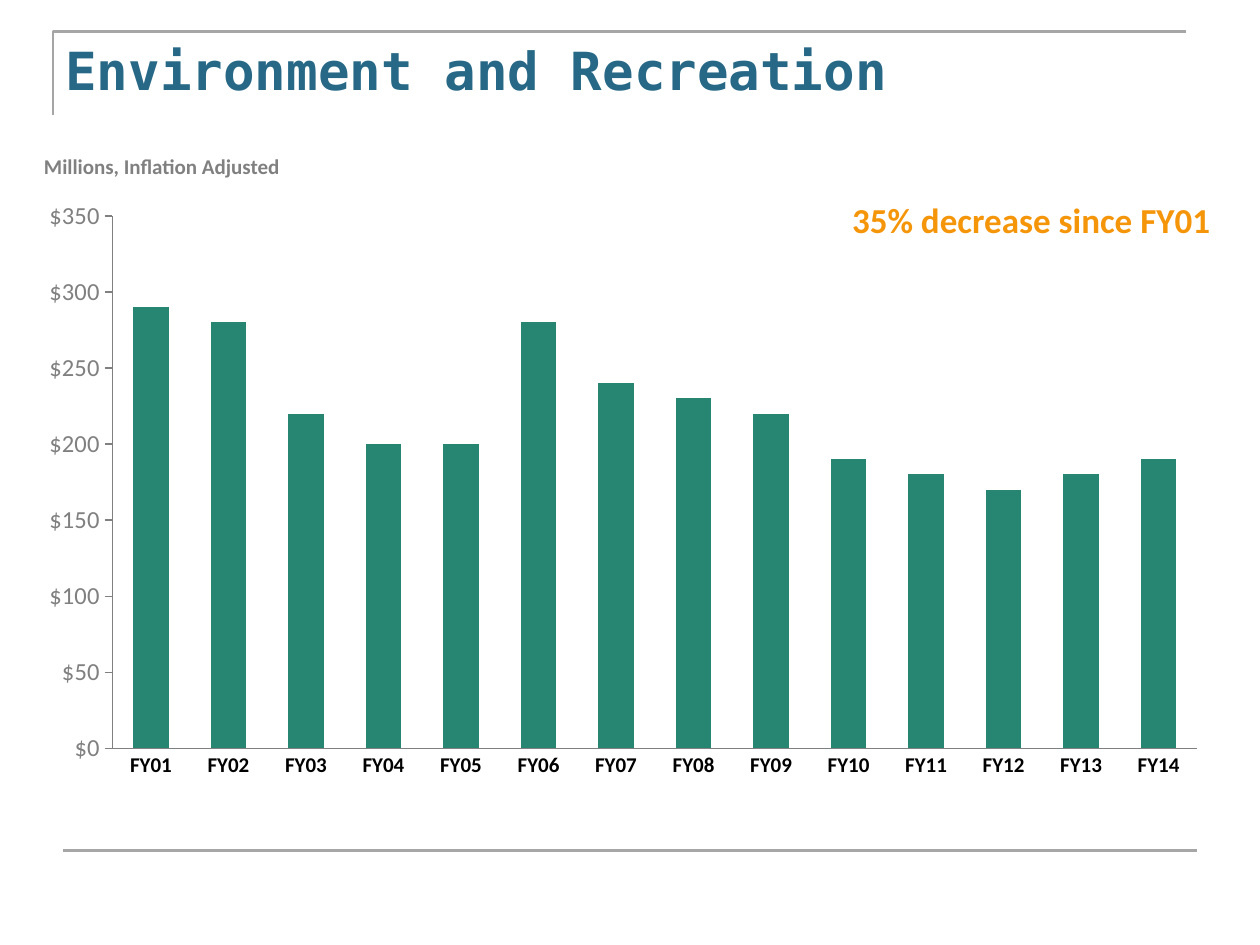
from lxml import etree
from pptx import Presentation
from pptx.chart.data import CategoryChartData
from pptx.dml.color import RGBColor
from pptx.enum import chart as charts, shapes, text
from pptx.oxml import parse_xml
from pptx.oxml.ns import nsdecls, qn
from pptx.util import Inches, Pt

# Content
TITLE = "Environment and Recreation"
UNITS = "Millions, Inflation Adjusted"
CALLOUT = "35% decrease since FY01"
SPENDING = [290, 280, 220, 200, 200, 280, 240, 230, 220, 190, 180, 170, 180, 190]
YEARS = [f"FY{number:02d}" for number in range(1, len(SPENDING) + 1)]
PLOT = {"x": 0.091, "y": 0.033, "w": 0.9, "h": 0.907}
COLORS = {"rule": "A6A6A6", "title": "266886", "bar": "268672", "gray": "808080",
          "accent": "F59509", "black": "000000", "white": "FFFFFF"}


def color(name):
    return RGBColor.from_string(COLORS[name])


def style_font(font, size, name, bold=False, face="Calibri"):
    font.size, font.bold, font.name = Pt(size), bold, face
    font.color.rgb = color(name)


def style_rule(shape):
    shape.line.color.rgb = color("rule")
    shape.line.width = Pt(1.5)


def write(shape, words, size, name, align, face="Calibri", wrap=True):
    frame = shape.text_frame
    frame.text = words
    frame.word_wrap = wrap
    para = frame.paragraphs[0]
    para.alignment = align
    style_font(para.runs[0].font, size, name, True, face)
    return frame


def style_axis(axis, size, name, bold, tick):
    style_font(axis.tick_labels.font, size, name, bold)
    axis.has_major_gridlines = False
    axis.major_tick_mark = tick
    axis.minor_tick_mark = charts.XL_TICK_MARK.NONE
    axis.format.line.color.rgb = color("gray")


deck = Presentation()
deck.slide_width, deck.slide_height = Inches(10), Inches(7.5)
page = deck.slides.add_slide(deck.slide_layouts[6])

# Title bracket and bottom rule
builder = page.shapes.build_freeform(Inches(0.42), Inches(0.91))
builder.add_line_segments([(Inches(0.42), Inches(0.25)), (Inches(9.41), Inches(0.25))],
                          close=False)
bracket = builder.convert_to_shape()
bracket.fill.background()
bracket.shadow.inherit = False
style_rule(bracket)

bottom = page.shapes.add_connector(shapes.MSO_CONNECTOR.STRAIGHT, Inches(0.5), Inches(6.75),
                                   Inches(9.5), Inches(6.75))
style_rule(bottom)
etree.SubElement(bottom.element.spPr, qn("a:effectLst"))

# Title
box = page.shapes.add_textbox(Inches(0.42), Inches(0.25), Inches(9), Inches(1.25))
write(box, TITLE, 30, "title", text.PP_ALIGN.LEFT, "DejaVu Sans Mono")

# Spending chart
data = CategoryChartData()
data.categories = YEARS
data.add_series("Series 1", SPENDING)
chart = page.shapes.add_chart(charts.XL_CHART_TYPE.COLUMN_STACKED, Inches(0.02), Inches(1.56),
                              Inches(9.57), Inches(4.66), data).chart
chart.has_legend = chart.has_title = False
style_font(chart.font, 18, "black")

columns = chart.plots[0]
columns.gap_width, columns.overlap = 118, 100
columns.vary_by_categories = False
bars = columns.series[0].format.fill
bars.solid()
bars.fore_color.rgb = color("bar")

style_axis(chart.category_axis, 12, "black", True, charts.XL_TICK_MARK.NONE)
dollars = chart.value_axis
style_axis(dollars, 14, "gray", False, charts.XL_TICK_MARK.OUTSIDE)
dollars.minimum_scale, dollars.maximum_scale, dollars.major_unit = 0, 350, 50
dollars.tick_labels.number_format = '"$"#,##0'
dollars.tick_labels.number_format_is_linked = False

# Fixed inner plot area
places = "".join(f'<c:{key} val="{value}"/>' for key, value in PLOT.items())
layout = parse_xml(
    f'<c:layout {nsdecls("c")}><c:manualLayout><c:layoutTarget val="inner"/>'
    f'<c:xMode val="edge"/><c:yMode val="edge"/>{places}</c:manualLayout></c:layout>')
area = chart.element.find(".//" + qn("c:plotArea"))
for old in area.findall(qn("c:layout")):
    area.remove(old)
area.insert(0, layout)

# Units label
label = page.shapes.add_textbox(Inches(0.23), Inches(1.17), Inches(2.11), Inches(0.35))
write(label, UNITS, 12, "gray", text.PP_ALIGN.CENTER, wrap=False)

# Callout
callout = page.shapes.add_shape(shapes.MSO_SHAPE.RECTANGLE, Inches(6.6), Inches(1.52),
                                Inches(3.17), Inches(0.44))
callout.shadow.inherit = False
callout.fill.solid()
callout.fill.fore_color.rgb = color("white")
callout.line.fill.background()
frame = write(callout, CALLOUT, 20, "accent", text.PP_ALIGN.CENTER)
frame.vertical_anchor = text.MSO_ANCHOR.MIDDLE
frame.auto_size = text.MSO_AUTO_SIZE.SHAPE_TO_FIT_TEXT

deck.save("out.pptx")
